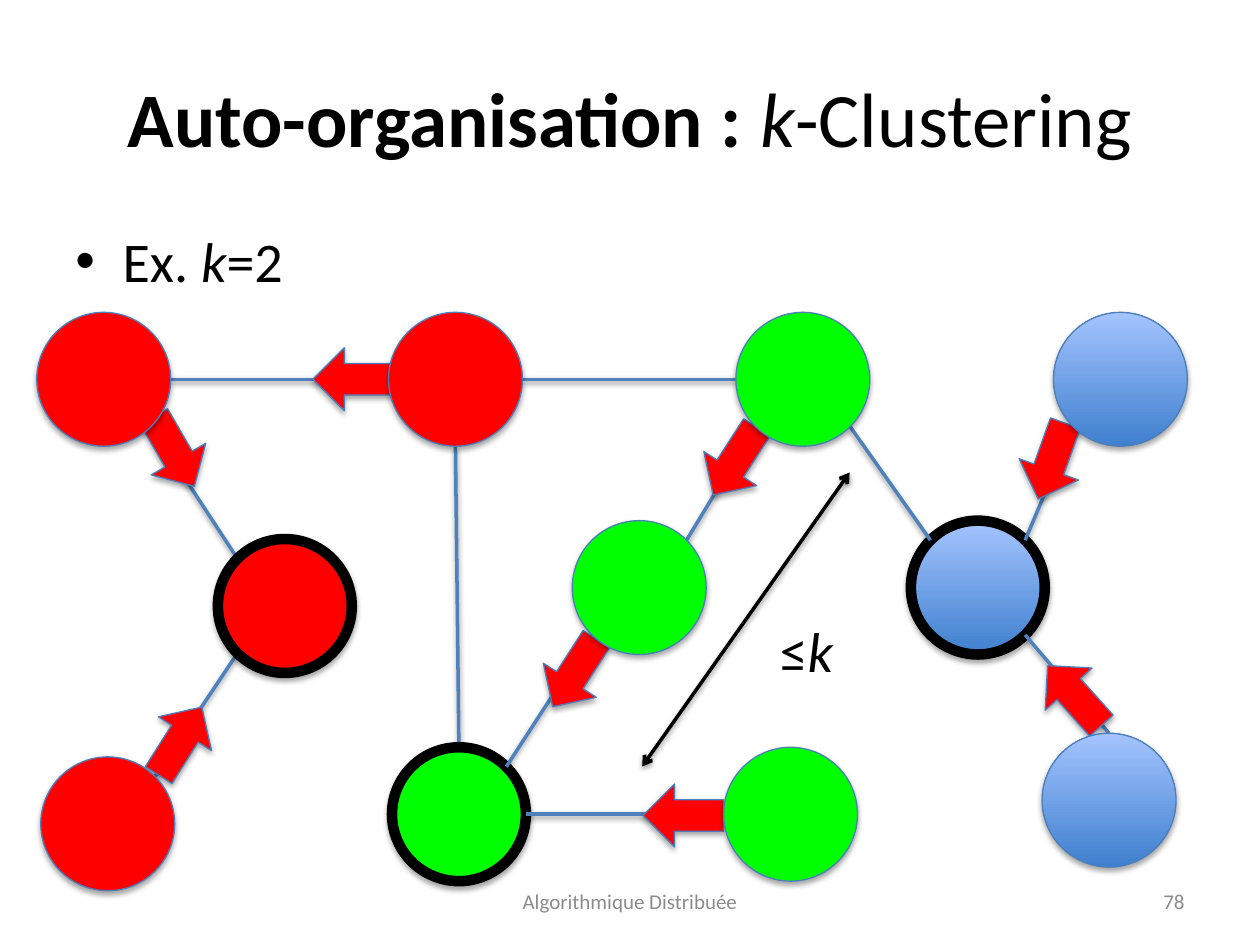
from lxml import etree
from pptx import Presentation
from pptx.dml.color import RGBColor
from pptx.enum.shapes import MSO_CONNECTOR, MSO_SHAPE
from pptx.enum.text import MSO_ANCHOR, MSO_AUTO_SIZE, PP_ALIGN
from pptx.oxml.ns import qn
from pptx.util import Pt

LINE = MSO_CONNECTOR.STRAIGHT
OVAL, ARROW = MSO_SHAPE.OVAL, MSO_SHAPE.RIGHT_ARROW
TOP, MID = MSO_ANCHOR.TOP, MSO_ANCHOR.MIDDLE
LEFT, CENTER, RIGHT = PP_ALIGN.LEFT, PP_ALIGN.CENTER, PP_ALIGN.RIGHT
GROW = MSO_AUTO_SIZE.SHAPE_TO_FIT_TEXT

BLACK, GREY, EDGE, RIM = "000000", "8C8C8C", "4F81BD", "4B7EBC"
RED, GREEN, BLUE = "FF0000", "00FF00", ("3F80CE", "A4C4FF")
SIZE = 76.5             # node diameter
LONG, WIDE = 46, 36     # block arrow
DIAG = 0.5 ** 0.5
SIDES = {"n": (0, -1), "s": (0, 1), "w": (-1, 0), "e": (1, 0),
         "nw": (-DIAG, -DIAG), "ne": (DIAG, -DIAG),
         "sw": (-DIAG, DIAG), "se": (DIAG, DIAG)}

# Nodes: left, top, fill; the heads lead their clusters
HEADS = {"red": (124.5, 308, RED), "green": (224, 427, GREEN),
         "blue": (520.5, 297.5, BLUE)}
NODES = {"r2": (222, 178.5, RED), "r1": (21, 178.5, RED),
         "r3": (23.3, 432.5, RED), "g1": (420.5, 178.5, GREEN),
         "g3": (413.5, 427, GREEN), "b1": (602, 178.5, BLUE),
         "b2": (595.5, 419, BLUE), "g2": (327, 297.5, GREEN)}
ALL = {**HEADS, **NODES}

# Edges: node, side, node, side
EDGES = [("r1", "se", "red", "nw"), ("r2", "s", "green", "n"),
         ("g1", "sw", "g2", "ne"), ("red", "sw", "r3", "ne"),
         ("r1", "e", "r2", "w"), ("r2", "e", "g1", "w"),
         ("g3", "w", "green", "e"), ("g2", "sw", "green", "ne"),
         ("g1", "se", "blue", "nw"), ("b1", "sw", "blue", "ne"),
         ("b2", "n", "blue", "se")]

# Block arrows: left, top, rotation
ARROWS = [(80, 405.5, 302.4), (76.5, 240, 59.9), (178.8, 198.7, 180),
          (367.5, 448, 180), (305.3, 366.5, 122.8), (397, 245.5, 122.8),
          (578, 245.5, 109.7), (591, 379.5, 228.1)]


def rgb(code):
    return RGBColor.from_string(code)


def write(par, runs, size, color=BLACK):
    """Add runs given as (text, style), with style any of b and i."""
    for text, style in runs:
        run = par.add_run()
        run.text = text
        font = run.font
        font.name, font.size = "Calibri", Pt(size)
        font.bold, font.italic = "b" in style, "i" in style
        font.color.rgb = rgb(color)


def label(slide, box, runs, size, color=BLACK, align=LEFT, anchor=TOP,
          wrap=True):
    shape = slide.shapes.add_textbox(*map(Pt, box))
    frame = shape.text_frame
    frame.word_wrap, frame.vertical_anchor = wrap, anchor
    if not wrap:
        frame.auto_size = GROW
    par = frame.paragraphs[0]
    par.alignment = align
    write(par, runs, size, color)
    return par


def bullet(par):
    props = par._p.get_or_add_pPr()
    props.set("marL", str(Pt(27)))
    props.set("indent", str(Pt(-27)))
    etree.SubElement(props, qn("a:buFont")).set("typeface", "Arial")
    etree.SubElement(props, qn("a:buChar")).set("char", "•")


def solid(slide, kind, box, fill, color=RIM, width=0.75):
    # The soft theme shadow is wanted, so it stays inherited
    shape = slide.shapes.add_shape(kind, *map(Pt, box))
    if isinstance(fill, tuple):
        shape.fill.gradient()
        shape.fill.gradient_angle = 90
        for stop, code in zip(shape.fill.gradient_stops, fill):
            stop.color.rgb = rgb(code)
    else:
        shape.fill.solid()
        shape.fill.fore_color.rgb = rgb(fill)
    shape.line.color.rgb = rgb(color)
    shape.line.width = Pt(width)
    return shape


def node(slide, name):
    left, top, fill = ALL[name]
    pen = (BLACK, 6) if name in HEADS else (RIM, 0.75)
    solid(slide, OVAL, (left, top, SIZE, SIZE), fill, *pen)


def line(slide, start, end, color=EDGE):
    link = slide.shapes.add_connector(LINE, *map(Pt, (*start, *end)))
    link.line.color.rgb = rgb(color)
    link.line.width = Pt(2)
    return link


def spot(name, side):
    left, top, _ = ALL[name]
    dx, dy = SIDES[side]
    return left + SIZE / 2 * (1 + dx), top + SIZE / 2 * (1 + dy)


def edges(slide, group):
    for a, out, b, into in group:
        line(slide, spot(a, out), spot(b, into))


def main():
    deck = Presentation()
    deck.slide_width, deck.slide_height = Pt(720), Pt(540)
    slide = deck.slides.add_slide(deck.slide_layouts[5])

    # Title
    title = slide.shapes.title
    title.left, title.top, title.width, title.height = map(
        Pt, (36, 21.6, 648, 90))
    title.text_frame.vertical_anchor = MID
    par = title.text_frame.paragraphs[0]
    par.alignment = CENTER
    write(par, [("Auto-organisation : ", "b"), ("k", "i"),
                ("-Clustering", "")], 44)

    # Example and footer
    par = label(slide, (36, 126, 648, 356.4),
                [("Ex. ", ""), ("k", "i"), ("=2", "")], 32)
    par.space_before = Pt(6.4)
    bullet(par)
    label(slide, (246, 500.5, 228, 28.75), [("Algorithmique Distribuée", "")],
          12, GREY, CENTER, MID)

    # Edges run under the red and green heads, but over the blue one
    edges(slide, EDGES[:4])
    node(slide, "red")
    node(slide, "green")
    edges(slide, EDGES[4:7])
    node(slide, "blue")
    edges(slide, EDGES[7:])

    # Block arrows towards the heads, then the other nodes on top
    for left, top, turn in ARROWS:
        solid(slide, ARROW, (left, top, LONG, WIDE), RED).rotation = turn
    for name in NODES:
        node(slide, name)

    # Distance mark
    span = line(slide, (485.5, 270), (367, 438), BLACK)
    pen = span.line._get_or_add_ln()
    for tip in ("a:headEnd", "a:tailEnd"):
        etree.SubElement(pen, qn(tip)).set("type", "arrow")
    label(slide, (438.5, 348.5, 51, 46), [("≤", ""), ("k", "i")], 32,
          wrap=False)

    # Slide number
    label(slide, (516, 500.5, 168, 28.75), [("78", "")], 12, GREY, RIGHT, MID)
    deck.save("out.pptx")


if __name__ == "__main__":
    main()
